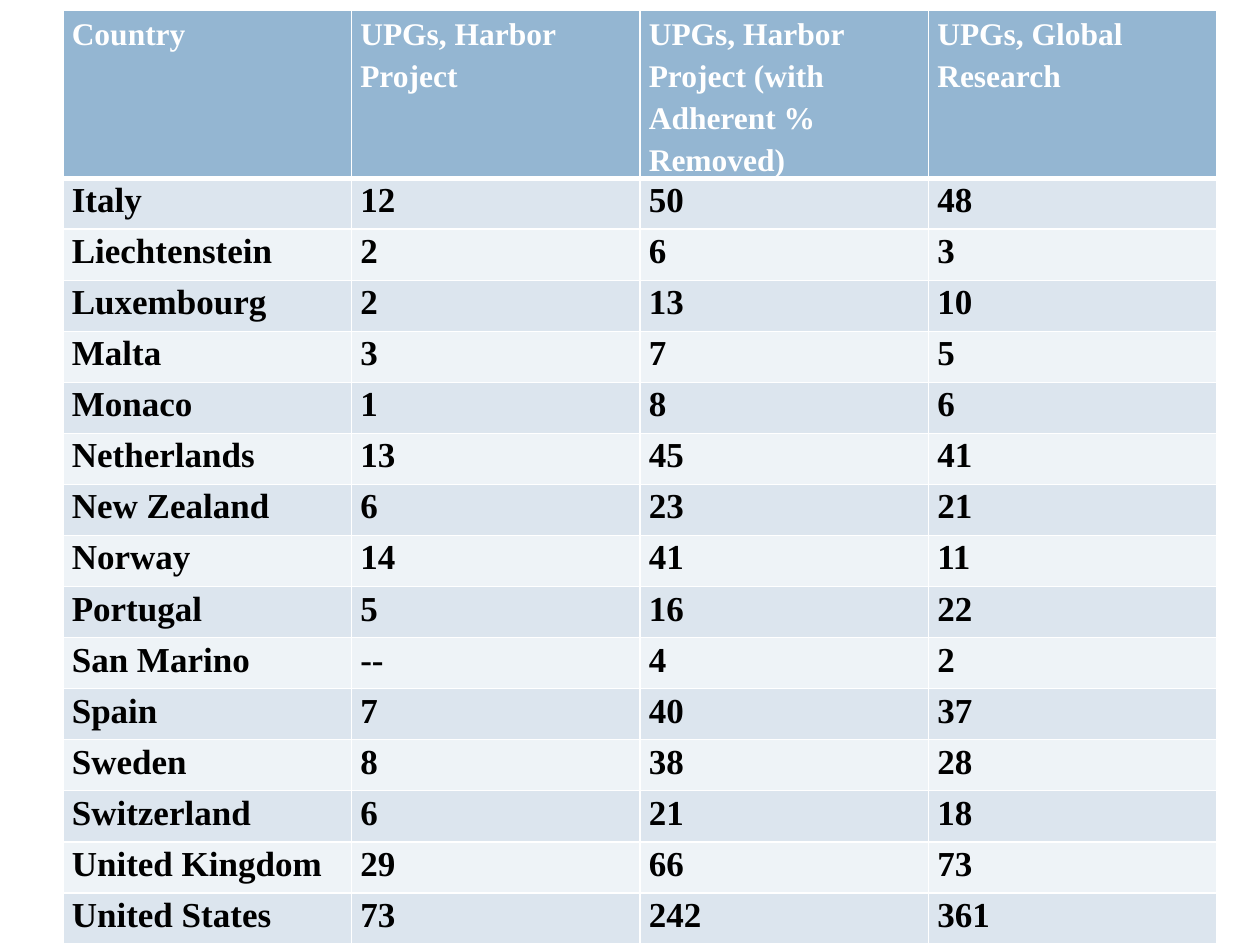
from lxml import etree
from pptx import Presentation
from pptx.dml.color import RGBColor
from pptx.oxml.ns import qn
from pptx.util import Inches, Pt

HEADER_FILL = "94B6D2"
BAND_FILLS = ["DCE5EE", "EEF3F7"]
WHITE, BLACK = "FFFFFF", "000000"
HEADER_HEIGHT, BODY_HEIGHT = 1.33, 6.08
COLUMN_WIDTH = 2.29

ROWS = [
    ("Country", "UPGs, Harbor Project",
     "UPGs, Harbor Project (with Adherent % Removed)", "UPGs, Global Research"),
    ("Italy", "12", "50", "48"),
    ("Liechtenstein", "2", "6", "3"),
    ("Luxembourg", "2", "13", "10"),
    ("Malta", "3", "7", "5"),
    ("Monaco", "1", "8", "6"),
    ("Netherlands", "13", "45", "41"),
    ("New Zealand", "6", "23", "21"),
    ("Norway", "14", "41", "11"),
    ("Portugal", "5", "16", "22"),
    ("San Marino", "--", "4", "2"),
    ("Spain", "7", "40", "37"),
    ("Sweden", "8", "38", "28"),
    ("Switzerland", "6", "21", "18"),
    ("United Kingdom", "29", "66", "73"),
    ("United States", "73", "242", "361"),
]
CELL_FORMAT = {
    "margin_left": Inches(0.07), "margin_right": Inches(0.07),
    "margin_top": 0, "margin_bottom": 0,
}


def color(value):
    return RGBColor.from_string(value)


def add_borders(cell, widths):
    """Draw white cell borders; widths maps each side (L, R, T, B) to points."""
    properties = cell._tc.get_or_add_tcPr()
    for side, width in widths.items():
        line = etree.SubElement(properties, qn(f"a:ln{side}"), w=str(Pt(width)))
        fill = etree.SubElement(line, qn("a:solidFill"))
        etree.SubElement(fill, qn("a:srgbClr"), val=WHITE)


deck = Presentation()
deck.slide_width, deck.slide_height = Inches(10), Inches(7.5)
page = deck.slides.add_slide(deck.slide_layouts[6])

column_count = len(ROWS[0])
frame = page.shapes.add_table(
    len(ROWS), column_count, Inches(0.5), Inches(0.08),
    Inches(COLUMN_WIDTH * column_count), Inches(HEADER_HEIGHT + BODY_HEIGHT))
table = frame.table
for column in table.columns:
    column.width = Inches(COLUMN_WIDTH)

for row_index, texts in enumerate(ROWS):
    is_header = row_index == 0
    table.rows[row_index].height = Inches(
        HEADER_HEIGHT if is_header else BODY_HEIGHT / (len(ROWS) - 1))
    band_fill = HEADER_FILL if is_header else BAND_FILLS[(row_index - 1) % 2]
    borders = {"L": 1, "R": 1, "T": 3 if row_index == 1 else 1, "B": 3 if is_header else 1}
    font_format = {"name": "Times New Roman", "size": Pt(18 if is_header else 20), "bold": True}

    for column_index, text in enumerate(texts):
        cell = table.cell(row_index, column_index)
        for name, value in CELL_FORMAT.items():
            setattr(cell, name, value)
        add_borders(cell, borders)
        cell.fill.solid()
        cell.fill.fore_color.rgb = color(band_fill)

        para = cell.text_frame.paragraphs[0]
        para.line_spacing = Pt(24)
        span = para.add_run()
        span.text = text
        for name, value in font_format.items():
            setattr(span.font, name, value)
        span.font.color.rgb = color(WHITE if is_header else BLACK)

deck.save("out.pptx")
